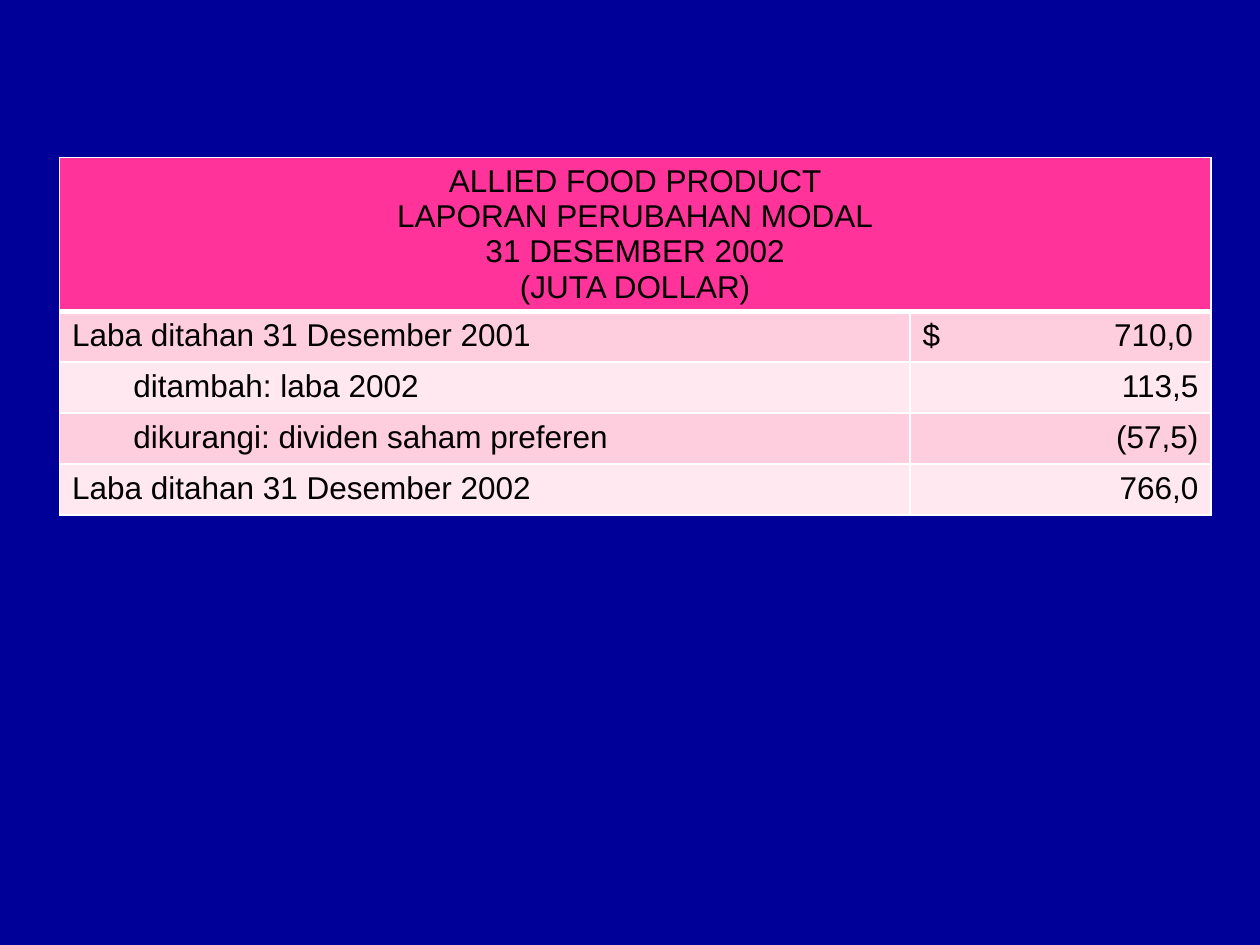
"""Build a slide with a statement of changes in equity as a table."""
from dataclasses import dataclass

import lxml.etree
import pptx
import pptx.dml.color
import pptx.enum.text
import pptx.oxml.ns
import pptx.table
import pptx.util

Pt = pptx.util.Pt
ALIGN = pptx.enum.text.PP_ALIGN
qn = pptx.oxml.ns.qn

COLORS = {
    "background": "000099",
    "heading": "FF3399",
    "odd_row": "FFCEDE",
    "even_row": "FFE8EF",
    "border": "FFFFFF",
    "text": "000000",
}
COLUMN_WIDTHS = (486, 172)
HEADING_HEIGHT = 87.4
ENTRY_HEIGHT = 29.15
DETAIL_INDENT = 35
AMOUNT_TAB = 154.5


@dataclass
class Entry:
    """One line of the statement."""

    label: str
    amount: str
    indent: float = 0


HEADING = "ALLIED FOOD PRODUCT\nLAPORAN PERUBAHAN MODAL\n31 DESEMBER 2002\n(JUTA DOLLAR)"
ENTRIES = [
    Entry("Laba ditahan 31 Desember 2001", "$\t710,0"),
    Entry("ditambah: laba 2002", "113,5", DETAIL_INDENT),
    Entry("dikurangi: dividen saham preferen", "(57,5)", DETAIL_INDENT),
    Entry("Laba ditahan 31 Desember 2002", "766,0"),
]


def rgb(name: str) -> pptx.dml.color.RGBColor:
    """Return a named colour."""
    return pptx.dml.color.RGBColor.from_string(COLORS[name])


def style_cell(cell: pptx.table._Cell, fill: str, bottom_width: float = 1) -> None:
    """Give a cell its borders and fill."""
    properties = cell._tc.get_or_add_tcPr()
    for side, width in (("L", 1), ("R", 1), ("T", 1), ("B", bottom_width)):
        line = lxml.etree.SubElement(properties, qn(f"a:ln{side}"), w=str(Pt(width)))
        solid = lxml.etree.SubElement(line, qn("a:solidFill"))
        lxml.etree.SubElement(solid, qn("a:srgbClr"), val=COLORS["border"])
    cell.fill.solid()
    cell.fill.fore_color.rgb = rgb(fill)


def write_cell(
    cell: pptx.table._Cell, text: str, alignment: ALIGN, indent: float = 0, tab: float = 0
) -> None:
    """Write a cell's text and format its paragraphs."""
    cell.text = text
    for paragraph in cell.text_frame.paragraphs:
        paragraph.alignment = alignment
        properties = paragraph._p.get_or_add_pPr()
        if indent:
            properties.set("marL", str(Pt(indent)))
        if tab:
            tabs = lxml.etree.SubElement(properties, qn("a:tabLst"))
            lxml.etree.SubElement(tabs, qn("a:tab"), pos=str(Pt(tab)), algn="r")
        paragraph.font.name = "Arial"
        paragraph.font.size = Pt(18)
        paragraph.font.bold = False
        paragraph.font.color.rgb = rgb("text")


def draw_entry(table: pptx.table.Table, row: int, entry: Entry) -> None:
    """Fill one row of the statement."""
    fill = "odd_row" if row % 2 else "even_row"
    label, amount = table.cell(row, 0), table.cell(row, 1)
    for cell in (label, amount):
        style_cell(cell, fill)
    write_cell(label, entry.label, ALIGN.LEFT, entry.indent)
    if "\t" in entry.amount:
        write_cell(amount, entry.amount, ALIGN.LEFT, tab=AMOUNT_TAB)
    else:
        write_cell(amount, entry.amount, ALIGN.RIGHT)


def main() -> None:
    """Create and save the slide."""
    presentation = pptx.Presentation()
    presentation.slide_width, presentation.slide_height = Pt(720), Pt(540)
    slide = presentation.slides.add_slide(presentation.slide_layouts[6])
    slide.background.fill.solid()
    slide.background.fill.fore_color.rgb = rgb("background")

    row_heights = [HEADING_HEIGHT] + [ENTRY_HEIGHT] * len(ENTRIES)
    statement = slide.shapes.add_table(
        len(row_heights), len(COLUMN_WIDTHS),
        Pt(34), Pt(90), Pt(sum(COLUMN_WIDTHS)), Pt(sum(row_heights)),
    ).table
    statement.first_row = False
    statement.horz_banding = False
    for column, width in zip(statement.columns, COLUMN_WIDTHS):
        column.width = Pt(width)
    for row, height in zip(statement.rows, row_heights):
        row.height = Pt(height)

    heading = statement.cell(0, 0)
    heading.merge(statement.cell(0, 1))
    for cell in statement.rows[0].cells:
        style_cell(cell, "heading", bottom_width=3)
    write_cell(heading, HEADING, ALIGN.CENTER)
    for row, entry in enumerate(ENTRIES, start=1):
        draw_entry(statement, row, entry)

    presentation.save("out.pptx")


if __name__ == "__main__":
    main()
